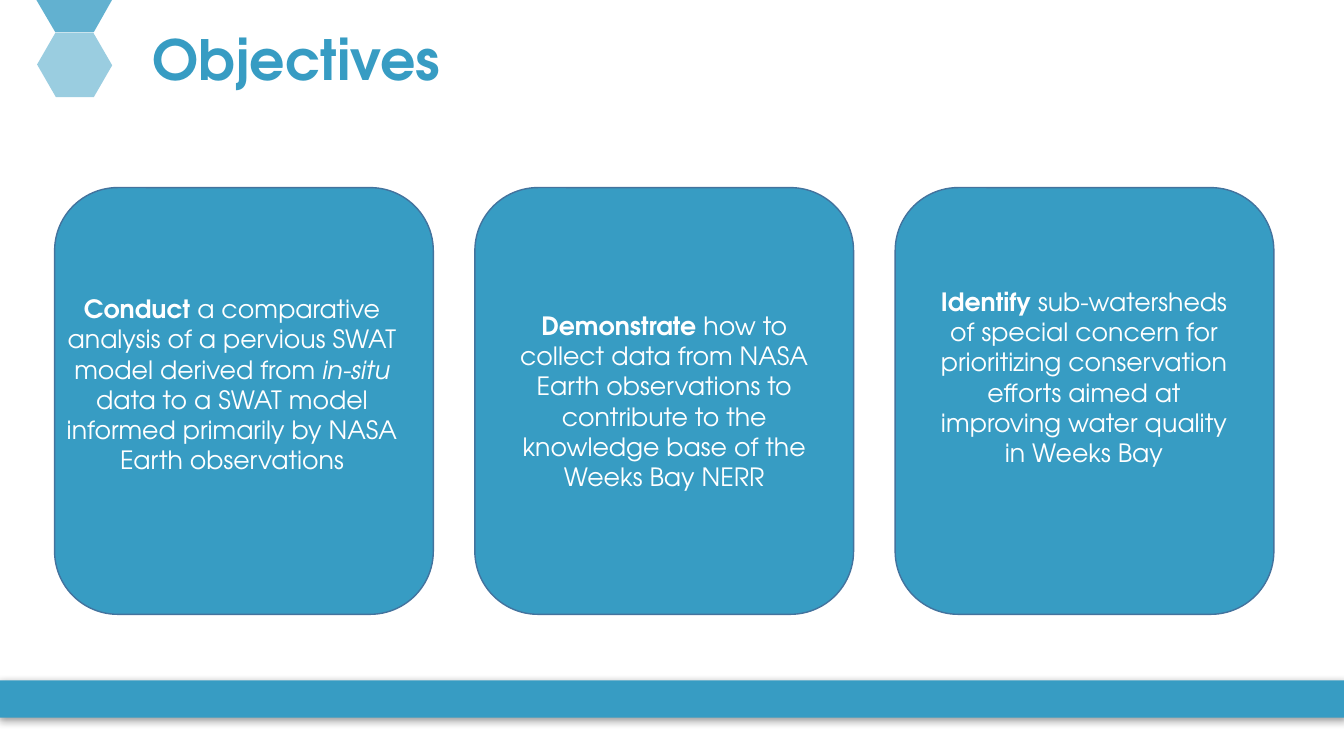
from dataclasses import dataclass

from lxml import etree
from pptx import Presentation
from pptx.dml.color import RGBColor
from pptx.enum import shapes, text
from pptx.oxml import ns
from pptx.util import Pt


@dataclass(frozen=True)
class Theme:
    font: str = "TeX Gyre Adventor"
    blue: str = "379CC3"
    outline: str = "43739E"
    white: str = "FFFFFF"
    black: str = "000000"
    title_size: float = 39.6
    body_size: float = 18


PLAIN, BOLD, ITALIC = {"bold": False}, {"bold": True}, {"bold": False, "italic": True}
SLIDE_WIDTH, SLIDE_HEIGHT = 960, 540
CARD_LEFT, CARD_TOP, CARD_PITCH = 39, 134, 300.2
CARD_WIDTH, CARD_HEIGHT = 270.5, 304.8

CONDUCT = [
    ("Conduct", BOLD),
    (" a comparative analysis of a pervious SWAT model derived from ", PLAIN),
    ("in-situ", ITALIC),
    (" data to a SWAT model informed primarily by NASA Earth observations", PLAIN),
]
DEMONSTRATE = [
    ("Demonstrate", BOLD),
    (" how to collect data from NASA Earth observations to contribute to the "
     "knowledge base of the Weeks Bay NERR", PLAIN),
]
IDENTIFY = [
    ("Identify", BOLD),
    (" sub-watersheds of special concern for prioritizing conservation efforts "
     "aimed at improving water quality in Weeks Bay", PLAIN),
]


class SlideBuilder:
    def __init__(self, slide, theme):
        self.slide = slide
        self.theme = theme

    def paint(self, shape, opacity=100, outlined=False):
        shape.shadow.inherit = False
        shape.fill.solid()
        shape.fill.fore_color.rgb = RGBColor.from_string(self.theme.blue)
        if opacity < 100:
            color = shape.element.spPr.find(".//" + ns.qn("a:srgbClr"))
            etree.SubElement(color, ns.qn("a:alpha"), val=str(opacity * 1000))
        if outlined:
            shape.line.color.rgb = RGBColor.from_string(self.theme.outline)
            shape.line.width = Pt(1)
        else:
            shape.line.fill.background()
        return shape

    def preset(self, kind, box, **style):
        shape = self.slide.shapes.add_shape(kind, *map(Pt, box))
        return self.paint(shape, **style)

    def outline(self, points, **style):
        start, *rest = [(Pt(x), Pt(y)) for x, y in points]
        builder = self.slide.shapes.build_freeform(*start)
        builder.add_line_segments(rest, close=True)
        return self.paint(builder.convert_to_shape(), **style)

    def drop_shadow(self, shape, blur, distance, opacity):
        effects = shape.element.spPr.find(ns.qn("a:effectLst"))
        shadow = etree.SubElement(
            effects, ns.qn("a:outerShdw"), blurRad=str(Pt(blur)),
            dist=str(Pt(distance)), dir="5400000", algn="t", rotWithShape="0")
        color = etree.SubElement(shadow, ns.qn("a:srgbClr"), val=self.theme.black)
        etree.SubElement(color, ns.qn("a:alpha"), val=str(opacity * 1000))

    def add_runs(self, frame, runs, size, color, align):
        frame.word_wrap = True
        paragraph = frame.paragraphs[0]
        paragraph.alignment = align
        for words, emphasis in runs:
            run = paragraph.add_run()
            run.text = words
            style = {"name": self.theme.font, "size": Pt(size), **emphasis}
            for key, value in style.items():
                setattr(run.font, key, value)
            run.font.color.rgb = RGBColor.from_string(color)
        return paragraph

    def title(self, words, box):
        heading = self.slide.shapes.title
        for key, value in zip(("left", "top", "width", "height"), box):
            setattr(heading, key, Pt(value))
        frame = heading.text_frame
        frame.auto_size = text.MSO_AUTO_SIZE.NONE
        frame.vertical_anchor = text.MSO_ANCHOR.MIDDLE
        paragraph = self.add_runs(frame, [(words, BOLD)], self.theme.title_size,
                                  self.theme.blue, text.PP_ALIGN.LEFT)
        paragraph.line_spacing = 0.9

    def objective(self, frame, runs):
        self.add_runs(frame, runs, self.theme.body_size, self.theme.white,
                      text.PP_ALIGN.CENTER)

    def text_box(self, runs, box):
        frame = self.slide.shapes.add_textbox(*map(Pt, box)).text_frame
        self.objective(frame, runs)
        frame.auto_size = text.MSO_AUTO_SIZE.SHAPE_TO_FIT_TEXT

    def card(self, column):
        left = CARD_LEFT + column * CARD_PITCH
        return self.preset(shapes.MSO_SHAPE.ROUNDED_RECTANGLE,
                           (left, CARD_TOP, CARD_WIDTH, CARD_HEIGHT), outlined=True)


def main():
    deck = Presentation()
    deck.slide_width, deck.slide_height = Pt(SLIDE_WIDTH), Pt(SLIDE_HEIGHT)
    page = SlideBuilder(deck.slides.add_slide(deck.slide_layouts[5]), Theme())

    page.outline([(26, 0), (80, 0), (67, 23), (39.5, 23)], opacity=78)
    hexagon = page.preset(shapes.MSO_SHAPE.HEXAGON, (26.6, 23, 53.3, 46.8), opacity=50)
    hexagon.adjustments[0] = 0.288
    hexagon.rotation = 120
    footer_band = page.preset(shapes.MSO_SHAPE.RECTANGLE, (0, 486, SLIDE_WIDTH, 26.6))
    page.drop_shadow(footer_band, blur=6, distance=2, opacity=40)

    page.title("Objectives", (101.5, 28.8, 828, 31))
    demonstrate_card = [page.card(column) for column in range(3)][1]
    demonstrate_card.text_frame.vertical_anchor = text.MSO_ANCHOR.MIDDLE
    page.objective(demonstrate_card.text_frame, DEMONSTRATE)
    page.text_box(CONDUCT, (39, 206, 253.4, 138.2))
    page.text_box(IDENTIFY, (656.6, 200.9, 235.4, 138.2))

    deck.save("out.pptx")


if __name__ == "__main__":
    main()
